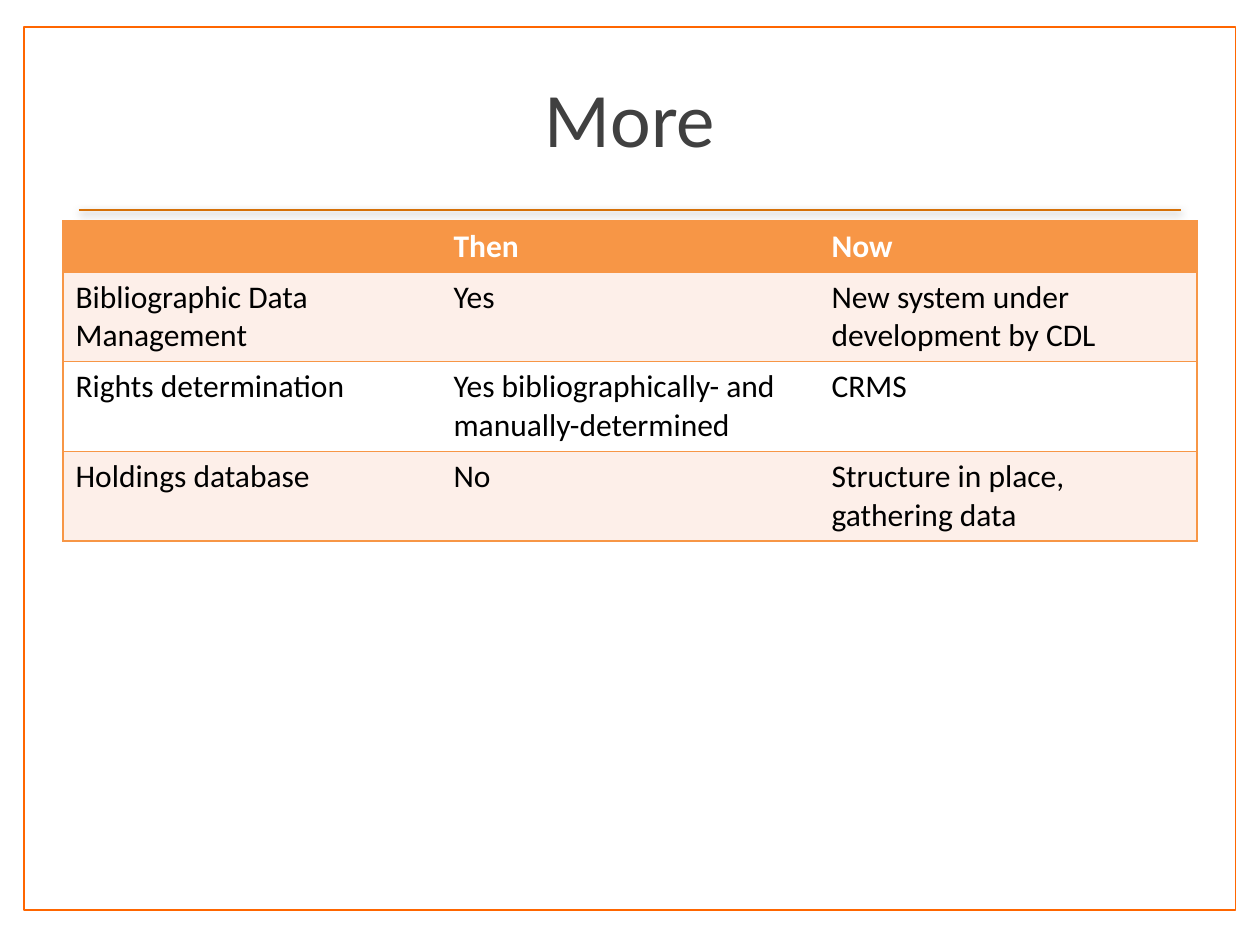
"""Build a slide that compares services then and now in a table."""
from lxml import etree
from pptx import Presentation
from pptx.dml.color import RGBColor
from pptx.enum.shapes import MSO_CONNECTOR, MSO_SHAPE
from pptx.enum.text import MSO_ANCHOR, PP_ALIGN
from pptx.oxml import parse_xml
from pptx.oxml.ns import nsdecls, qn
from pptx.util import Cm, Pt

RECTANGLE = MSO_SHAPE.RECTANGLE
STRAIGHT = MSO_CONNECTOR.STRAIGHT
MIDDLE = MSO_ANCHOR.MIDDLE
LEFT, CENTER = PP_ALIGN.LEFT, PP_ALIGN.CENTER

WHITE = RGBColor(0xFF, 0xFF, 0xFF)
BLACK = RGBColor(0x00, 0x00, 0x00)
CHARCOAL = RGBColor(0x40, 0x40, 0x40)
FRAME_ORANGE = RGBColor(0xFF, 0x66, 0x00)
RULE_ORANGE = RGBColor(0xD5, 0x70, 0x07)
TABLE_ORANGE = RGBColor(0xF7, 0x96, 0x46)
BAND = RGBColor(0xFD, 0xEF, 0xE9)

ROWS = [
    ("", "Then", "Now"),
    ("Bibliographic Data Management", "Yes", "New system under development by CDL"),
    ("Rights determination", "Yes bibliographically- and manually-determined", "CRMS"),
    ("Holdings database", "No", "Structure in place, gathering data"),
]


def write_text(frame, text, *, size=18, color=BLACK, bold=False, align=LEFT):
    """Write one formatted paragraph into a text frame."""
    para = frame.paragraphs[0]
    para.alignment = align
    para.font.size = Pt(size)
    if text:
        span = para.add_run()
        span.text = text
        span.font.name = "Calibri"
        span.font.size = Pt(size)
        span.font.bold = bold
        span.font.color.rgb = color


def set_borders(cell, colors):
    """Give a cell its left, right, top and bottom borders; None means no line."""
    properties = cell._tc.get_or_add_tcPr()
    for index, (side, color) in enumerate(zip("LRTB", colors)):
        border = etree.Element(qn(f"a:ln{side}"), w=str(Pt(1)))
        if color is None:
            etree.SubElement(border, qn("a:noFill"))
        else:
            fill = etree.SubElement(border, qn("a:solidFill"))
            etree.SubElement(fill, qn("a:srgbClr"), val=str(color))
        properties.insert(index, border)


class SlideBuilder:
    """Hold the current slide and draw its elements in one style."""

    def __init__(self, page):
        self.page = page

    def frame(self, left, top, width, height):
        """Draw the outlined page frame."""
        shape = self.page.shapes.add_shape(
            RECTANGLE, Cm(left), Cm(top), Cm(width), Cm(height))
        shape.shadow.inherit = False
        shape.fill.solid()
        shape.fill.fore_color.rgb = WHITE
        shape.line.color.rgb = FRAME_ORANGE
        shape.line.width = Pt(1)

    def rule(self, left, right, top):
        """Draw a horizontal line with a soft shadow."""
        line = self.page.shapes.add_connector(
            STRAIGHT, Cm(left), Cm(top), Cm(right), Cm(top))
        line.line.color.rgb = RULE_ORANGE
        line.line.width = Pt(1)
        line._element.spPr.append(parse_xml(
            f'<a:effectLst {nsdecls("a")}>'
            f'<a:outerShdw blurRad="{Pt(5)}" dist="{Pt(1.8)}" dir="5400000" rotWithShape="0">'
            '<a:srgbClr val="000000"><a:alpha val="35000"/></a:srgbClr>'
            '</a:outerShdw></a:effectLst>'))

    def title(self, text, left, top, width, height):
        """Place the title in front of the frame."""
        title = self.page.shapes.title
        title.element.getparent().append(title.element)
        title.left, title.top = Cm(left), Cm(top)
        title.width, title.height = Cm(width), Cm(height)
        title.text_frame.vertical_anchor = MIDDLE
        write_text(title.text_frame, text, size=44, color=CHARCOAL, align=CENTER)

    def table(self, rows, left, top, width, header_height, row_height):
        """Draw a banded table with equal columns and a header row."""
        columns = len(rows[0])
        height = header_height + row_height * (len(rows) - 1)
        table = self.page.shapes.add_table(
            len(rows), columns, Cm(left), Cm(top), Cm(width), Cm(height)).table
        for column in table.columns:
            column.width = Cm(width / columns)
        for r, texts in enumerate(rows):
            header = r == 0
            table.rows[r].height = Cm(header_height if header else row_height)
            for c, text in enumerate(texts):
                cell = table.cell(r, c)
                cell.fill.solid()
                cell.fill.fore_color.rgb = (
                    TABLE_ORANGE if header else BAND if r % 2 else WHITE)
                write_text(cell.text_frame, text, bold=header,
                           color=WHITE if header else BLACK)
                set_borders(cell, (TABLE_ORANGE if c == 0 else None,
                                   TABLE_ORANGE if c == columns - 1 else None,
                                   TABLE_ORANGE, TABLE_ORANGE))


def main():
    """Build and save the deck."""
    deck = Presentation()
    deck.slide_width, deck.slide_height = Cm(25.4), Cm(19.05)
    builder = SlideBuilder(deck.slides.add_slide(deck.slide_layouts[5]))
    builder.frame(0.49, 0.55, 24.42, 17.8)
    builder.rule(1.59, 23.81, 4.23)
    builder.title("More", 1.27, 0.76, 22.86, 3.18)
    builder.table(ROWS, 1.27, 4.45, 22.86, 1.03, 1.81)
    deck.save("out.pptx")


if __name__ == "__main__":
    main()
